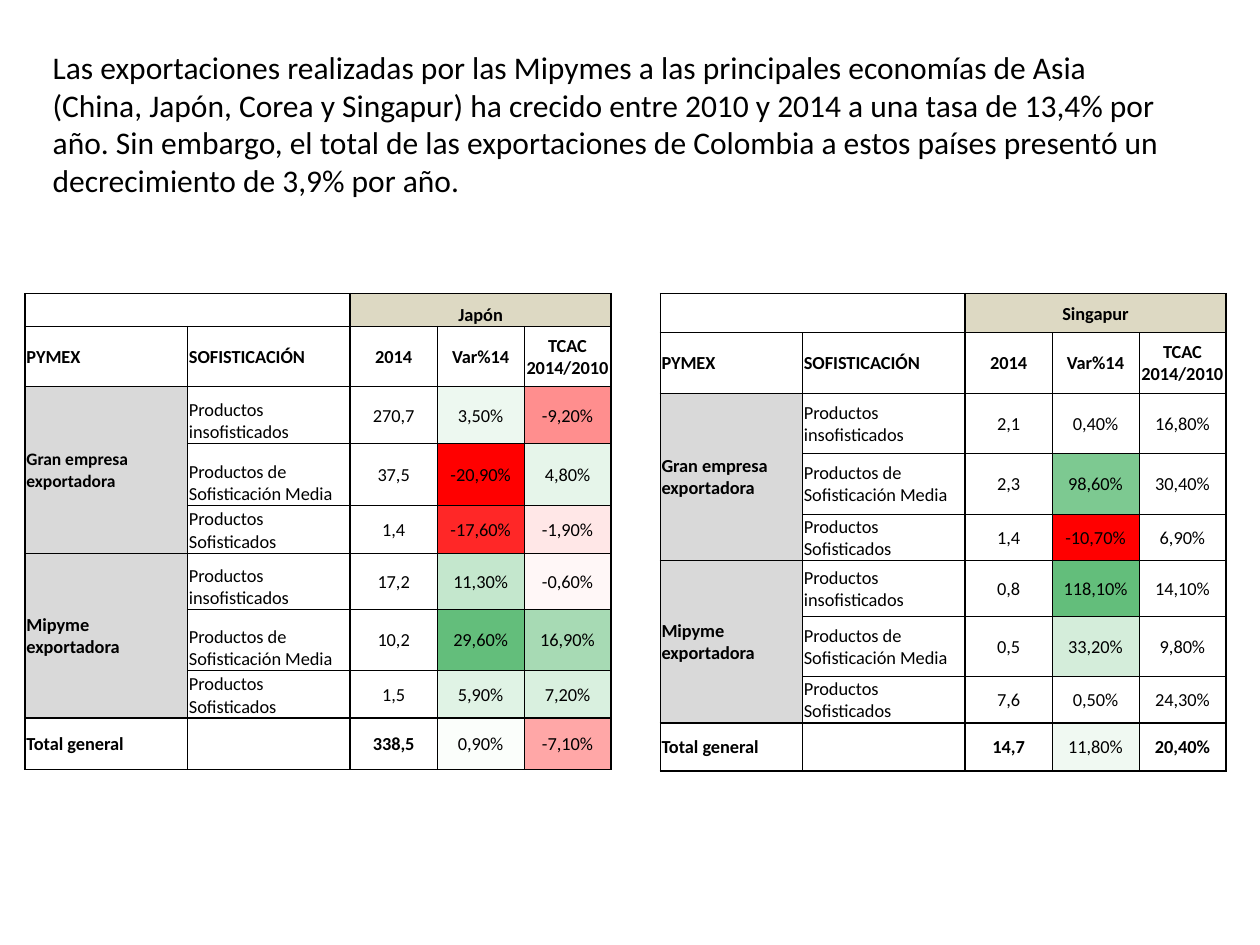
import pptx
import pptx.util
import pptx.dml.color
import pptx.enum.text
import pptx.oxml.ns
from lxml import etree

Inches = pptx.util.Inches
ALIGN = pptx.enum.text.PP_ALIGN
ANCHOR = pptx.enum.text.MSO_ANCHOR

MESSAGE = (
    "Las exportaciones realizadas por las Mipymes a las principales economías de Asia "
    "(China, Japón, Corea y Singapur) ha crecido entre 2010 y 2014 a una tasa de 13,4% por año. "
    "Sin embargo, el total de las exportaciones de Colombia a estos países presentó un "
    "decrecimiento de 3,9% por año."
)
HEADINGS = ["PYMEX", "SOFISTICACIÓN", "2014", "Var%14", "TCAC 2014/2010"]
COMPANIES = ["Gran empresa exportadora", "Mipyme exportadora"]
PRODUCTS = ["Productos insofisticados", "Productos de Sofisticación Media", "Productos Sofisticados"]
COUNTRIES = [
    {
        "name": "Japón", "left": 0.2, "first_column": 1.29, "company_size": 10,
        "heights": [0.26, 0.48, 0.45, 0.49, 0.38, 0.45, 0.48, 0.38, 0.41],
        "label_anchor": ANCHOR.BOTTOM, "bold_totals": {2},
        "values": [
            ("270,7", "3,50%", "-9,20%"), ("37,5", "-20,90%", "4,80%"), ("1,4", "-17,60%", "-1,90%"),
            ("17,2", "11,30%", "-0,60%"), ("10,2", "29,60%", "16,90%"), ("1,5", "5,90%", "7,20%"),
            ("338,5", "0,90%", "-7,10%"),
        ],
        "fills": {
            3: ["EDF8F0", "FF0000", "FF2727", "C4E7CD", "63BE7B", "E0F3E5", "FBFEFB"],
            4: ["FF8E8E", "E6F5EA", "FFE7E7", "FFF7F7", "A7DAB4", "D9F0DF", "FFA7A7"],
        },
    },
    {
        "name": "Singapur", "left": 5.24, "first_column": 1.13, "company_size": 10.5,
        "heights": [0.31, 0.48, 0.48, 0.48, 0.37, 0.44, 0.48, 0.37, 0.38],
        "label_anchor": ANCHOR.MIDDLE, "bold_totals": {2, 4},
        "values": [
            ("2,1", "0,40%", "16,80%"), ("2,3", "98,60%", "30,40%"), ("1,4", "-10,70%", "6,90%"),
            ("0,8", "118,10%", "14,10%"), ("0,5", "33,20%", "9,80%"), ("7,6", "0,50%", "24,30%"),
            ("14,7", "11,80%", "20,40%"),
        ],
        "fills": {3: [None, "7DC991", "FF0000", "63BE7B", "D4EDDA", None, "F0F9F2"]},
    },
]
TOTAL_ROW = 8
THICK_ROWS = {0, TOTAL_ROW, TOTAL_ROW + 1}
THICK_COLUMNS = {0, 2, 5}
SPANS = {(0, 0): (1, 2), (0, 2): (1, 3), (2, 0): (3, 1), (5, 0): (3, 1)}


def color(value):
    return pptx.dml.color.RGBColor.from_string(value)


def set_font(paragraph, size, bold=False):
    paragraph.font.name = "Calibri"
    paragraph.font.size = pptx.util.Pt(size)
    paragraph.font.bold = bold
    paragraph.font.color.rgb = color("000000")


def set_borders(cell, row, column):
    properties = cell._tc.get_or_add_tcPr()
    edges = [
        ("lnL", column in THICK_COLUMNS),
        ("lnR", column + cell.span_width in THICK_COLUMNS),
        ("lnT", row in THICK_ROWS),
        ("lnB", row + cell.span_height in THICK_ROWS),
    ]
    for position, (tag, thick) in enumerate(edges):
        line = etree.Element(pptx.oxml.ns.qn("a:" + tag), w=str(pptx.util.Pt(1 if thick else 0.5)))
        fill = etree.SubElement(line, pptx.oxml.ns.qn("a:solidFill"))
        etree.SubElement(fill, pptx.oxml.ns.qn("a:srgbClr"), val="000000")
        properties.insert(position, line)


def table_rows(country):
    rows = [["", "", country["name"], "", ""], HEADINGS]
    for index, values in enumerate(country["values"][:-1]):
        company, product = divmod(index, len(PRODUCTS))
        rows.append([COMPANIES[company] if product == 0 else "", PRODUCTS[product], *values])
    return rows + [["Total general", "", *country["values"][-1]]]


def cell_fill(country, row, column):
    if (row, column) == (0, 2):
        return "DDD9C3"
    if column == 0 and 2 <= row < TOTAL_ROW:
        return "D9D9D9"
    if row >= 2 and column in country["fills"]:
        return country["fills"][column][row - 2]
    return None


def format_cell(cell, country, row, column, text):
    cell.margin_left = cell.margin_right = cell.margin_top = Inches(0.01)
    cell.margin_bottom = 0
    is_label = row == 0 or (column == 1 and 2 <= row < TOTAL_ROW)
    cell.vertical_anchor = country["label_anchor"] if is_label else ANCHOR.MIDDLE
    fill = cell_fill(country, row, column)
    if fill:
        cell.fill.solid()
        cell.fill.fore_color.rgb = color(fill)
    else:
        cell.fill.background()
    cell.text = text
    paragraph = cell.text_frame.paragraphs[0]
    paragraph.alignment = ALIGN.CENTER if column >= 2 else ALIGN.LEFT
    bold = row < 2 or column == 0 or (row == TOTAL_ROW and column in country["bold_totals"])
    set_font(paragraph, country["company_size"] if (row, column) == (2, 0) else 10.5, bold)
    if not text:
        etree.SubElement(paragraph._p, pptx.oxml.ns.qn("a:endParaRPr"), sz="1050")
    set_borders(cell, row, column)


def add_country_table(slide, country):
    widths = [country["first_column"], 1.29, 0.69, 0.69, 0.69]
    heights = country["heights"]
    table = slide.shapes.add_table(
        len(heights), len(widths), Inches(country["left"]), Inches(2.33),
        Inches(sum(widths)), Inches(sum(heights)),
    ).table
    table.first_row = table.horz_banding = False
    for column, width in zip(table.columns, widths):
        column.width = Inches(width)
    for row, height in zip(table.rows, heights):
        row.height = Inches(height)
    for (row, column), (down, across) in SPANS.items():
        table.cell(row, column).merge(table.cell(row + down - 1, column + across - 1))
    for row, texts in enumerate(table_rows(country)):
        for column, text in enumerate(texts):
            cell = table.cell(row, column)
            if not cell.is_spanned:
                format_cell(cell, country, row, column, text)


def main():
    presentation = pptx.Presentation()
    presentation.slide_width, presentation.slide_height = Inches(10), Inches(7.5)
    slide = presentation.slides.add_slide(presentation.slide_layouts[6])
    message = slide.shapes.add_textbox(Inches(0.32), Inches(0.33), Inches(9.04), Inches(1.31)).text_frame
    message.word_wrap = True
    message.auto_size = pptx.enum.text.MSO_AUTO_SIZE.SHAPE_TO_FIT_TEXT
    message.text = MESSAGE
    set_font(message.paragraphs[0], 18)
    for country in COUNTRIES:
        add_country_table(slide, country)
    presentation.save("out.pptx")


if __name__ == "__main__":
    main()
